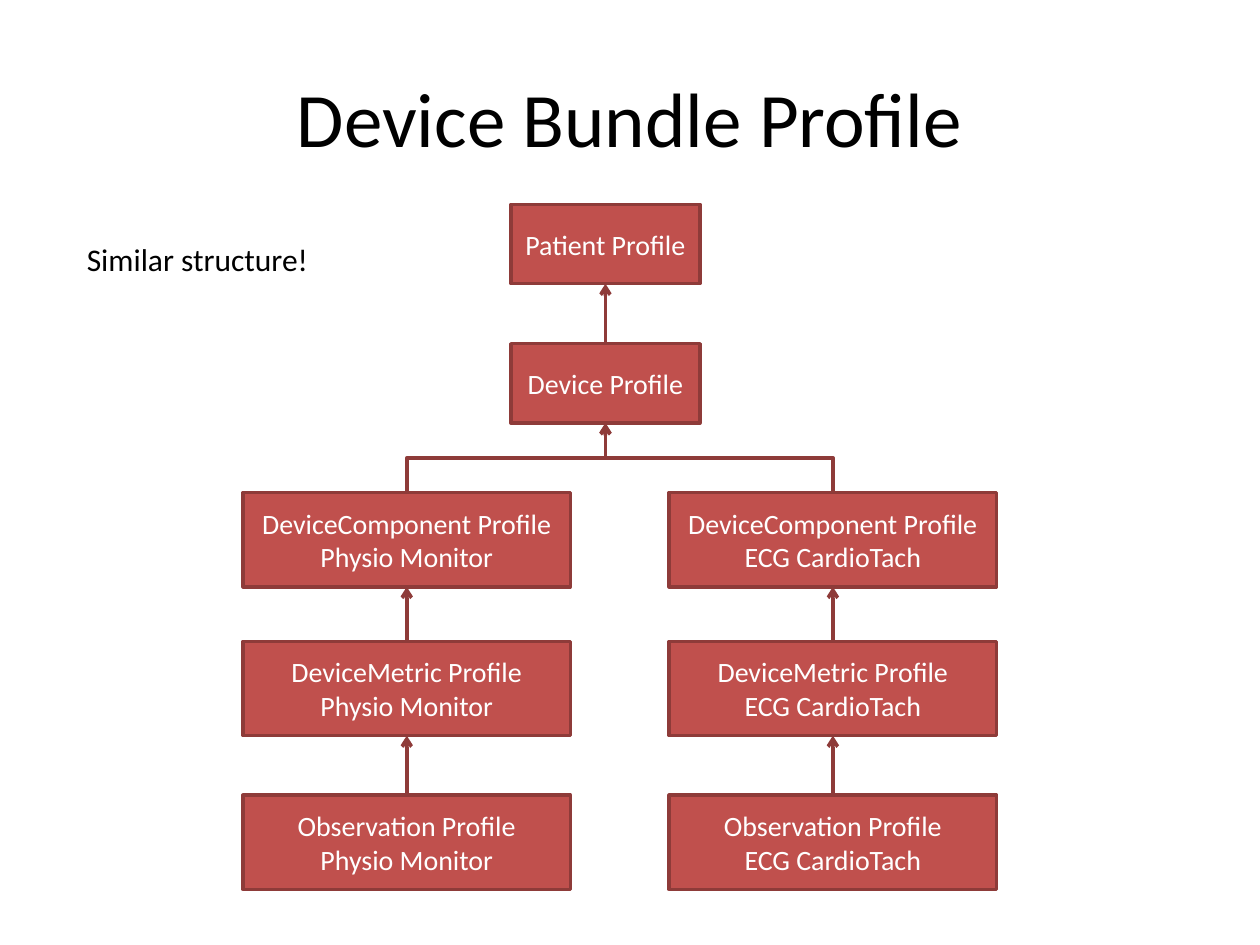
from dataclasses import dataclass

import pptx
import pptx.dml.color
import pptx.enum.shapes
import pptx.enum.text
import pptx.oxml
import pptx.oxml.ns
import pptx.util

Cm = pptx.util.Cm
Align = pptx.enum.text.PP_ALIGN
Connector = pptx.enum.shapes.MSO_CONNECTOR

COLORS = {"fill": "C0504D", "line": "8E3B39", "box_text": "FFFFFF", "text": "000000"}
FONT = "Calibri"
TOP, BOTTOM = 0, 2


@dataclass
class Box:
    text: str
    left: float
    top: float
    width: float
    height: float


@dataclass
class Label:
    box: Box
    size: int
    alignment: Align
    anchor: pptx.enum.text.MSO_ANCHOR
    wrap: bool


def color(name: str) -> pptx.dml.color.RGBColor:
    return pptx.dml.color.RGBColor.from_string(COLORS[name])


def write_text(shape, text: str, size: int, color_name: str, alignment: Align) -> None:
    shape.text_frame.text = text
    for paragraph in shape.text_frame.paragraphs:
        paragraph.alignment = alignment
        for run in paragraph.runs:
            run.font.name = FONT
            run.font.size = pptx.util.Pt(size)
            run.font.color.rgb = color(color_name)


def draw_label(slide, label: Label) -> None:
    box = label.box
    shape = slide.shapes.add_textbox(Cm(box.left), Cm(box.top), Cm(box.width), Cm(box.height))
    shape.text_frame.word_wrap = label.wrap
    shape.text_frame.vertical_anchor = label.anchor
    write_text(shape, box.text, label.size, "text", label.alignment)


def draw_box(slide, box: Box):
    shape = slide.shapes.add_shape(
        pptx.enum.shapes.MSO_SHAPE.RECTANGLE,
        Cm(box.left), Cm(box.top), Cm(box.width), Cm(box.height),
    )
    shape.shadow.inherit = False
    shape.fill.solid()
    shape.fill.fore_color.rgb = color("fill")
    shape.line.color.rgb = color("line")
    shape.line.width = pptx.util.Pt(2)
    shape.text_frame.vertical_anchor = pptx.enum.text.MSO_ANCHOR.MIDDLE
    write_text(shape, box.text, 16, "box_text", Align.CENTER)
    return shape


def style_arrow(connector) -> None:
    connector.line.color.rgb = color("line")
    connector.line.width = pptx.util.Pt(2)
    properties = connector._element.spPr
    line = properties.find(pptx.oxml.ns.qn("a:ln"))
    namespace = pptx.oxml.ns.nsdecls("a")
    line.append(pptx.oxml.parse_xml(f'<a:tailEnd {namespace} type="arrow"/>'))
    properties.append(pptx.oxml.parse_xml(f"<a:effectLst {namespace}/>"))


def draw_straight_arrow(slide, child, parent) -> None:
    connector = slide.shapes.add_connector(Connector.STRAIGHT, 0, 0, 0, 0)
    connector.begin_connect(child, TOP)
    connector.end_connect(parent, BOTTOM)
    style_arrow(connector)


def draw_elbow_arrow(slide, child, parent) -> None:
    begin_x = child.left + child.width // 2
    end_x = parent.left + parent.width // 2
    end_y = parent.top + parent.height
    half_rise = (child.top - end_y) // 2
    half_run = (end_x - begin_x) // 2
    center_x, center_y = begin_x + half_run, end_y + half_rise
    connector = slide.shapes.add_connector(
        Connector.ELBOW,
        center_x - half_rise, center_y - half_run,
        center_x + half_rise, center_y + half_run,
    )
    transform = connector._element.spPr.find(pptx.oxml.ns.qn("a:xfrm"))
    transform.set("rot", str(270 * 60000))
    style_arrow(connector)


def main() -> None:
    presentation = pptx.Presentation()
    presentation.slide_width, presentation.slide_height = Cm(25.4), Cm(19.05)
    slide = presentation.slides.add_slide(presentation.slide_layouts[6])

    anchors = pptx.enum.text.MSO_ANCHOR
    labels = [
        Label(Box("Device Bundle Profile", 1.27, 0.76, 22.86, 3.18),
              44, Align.CENTER, anchors.MIDDLE, True),
        Label(Box("Similar structure!", 1.5, 4.72, 5.03, 1.02),
              18, Align.LEFT, anchors.TOP, False),
    ]
    for label in labels:
        draw_label(slide, label)

    patient = draw_box(slide, Box("Patient Profile", 10.3, 4.12, 3.81, 1.6))
    device = draw_box(slide, Box("Device Profile", 10.3, 6.93, 3.81, 1.6))
    draw_straight_arrow(slide, device, patient)

    columns = {"Physio Monitor": 4.9, "ECG CardioTach": 13.49}
    rows = {"DeviceComponent": 9.93, "DeviceMetric": 12.93, "Observation": 16.03}
    for source, left in columns.items():
        parent = device
        for resource, top in rows.items():
            box = Box(f"{resource} Profile\n{source}", left, top, 6.6, 1.9)
            child = draw_box(slide, box)
            draw_arrow = draw_elbow_arrow if parent is device else draw_straight_arrow
            draw_arrow(slide, child, parent)
            parent = child

    presentation.save("out.pptx")


if __name__ == "__main__":
    main()
